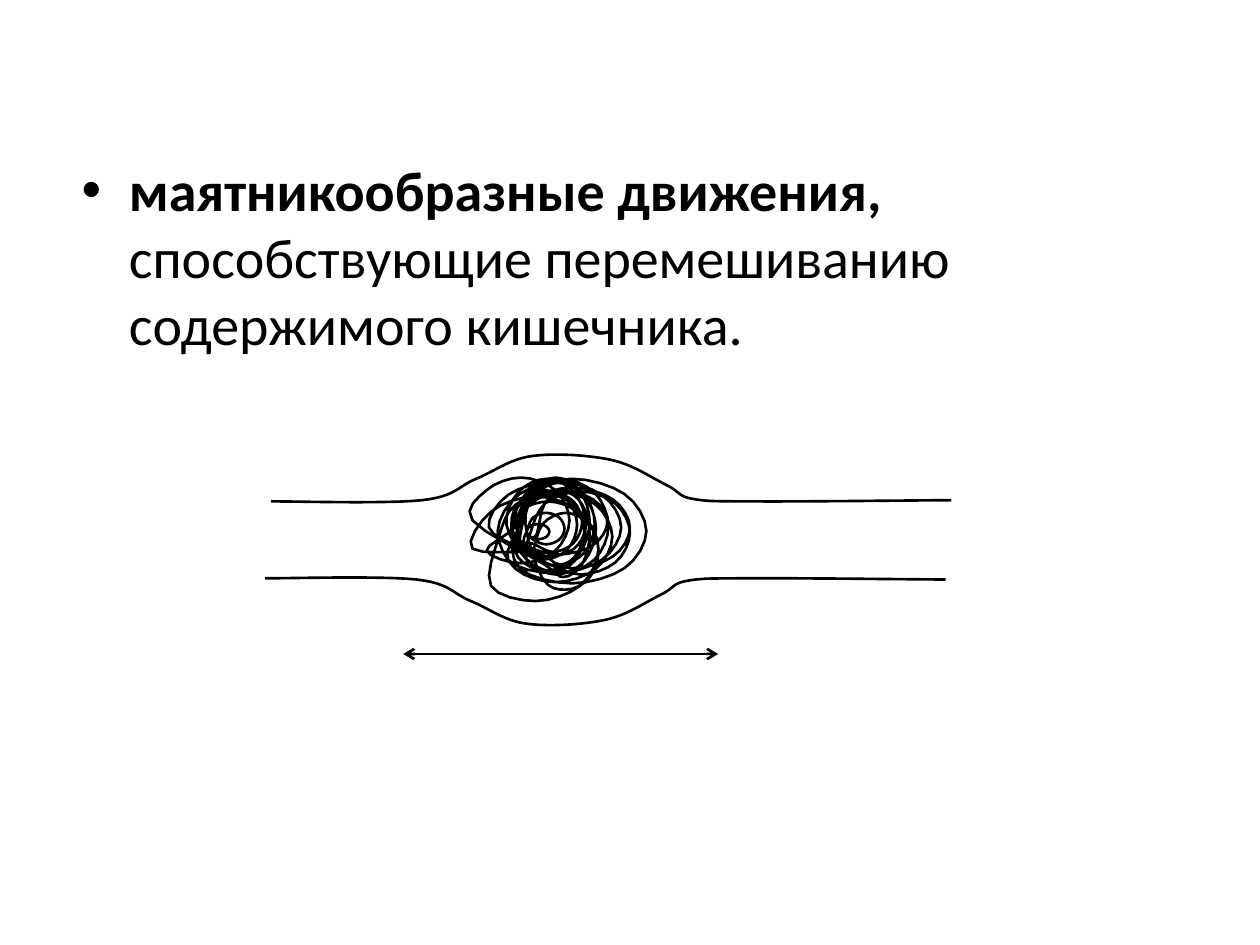
import math

from pptx import Presentation, util as u
from pptx.dml.color import RGBColor
from pptx.enum import shapes, text
from pptx.oxml.ns import qn
from lxml import etree

COLORS = {"ink": "000000"}
FONT = "Calibri"
BODY = [
    ("маятникообразные движения,", True),
    (" способствующие перемешиванию содержимого кишечника.", False),
]

# Drawing points are (x, y) on a grid of STEP points.
STEP = 0.72
WALL = [(215, 398), (335, 397), (378, 380), (422, 362), (485, 365), (529, 385),
        (550, 396), (603, 398), (755, 397)]
MIRROR = 857    # sum of the heights of the upper and lower wall
SHIFT = -4.5    # the lower wall lies a little to the left
# Each loop of the food ball: left, top, right, bottom.
LOOPS = [
    (406, 398, 464, 442), (388, 382, 493, 455), (414, 379, 468, 449),
    (411, 393, 464, 454), (402, 380, 465, 453), (406, 389, 482, 440),
    (419, 407, 448, 432), (418, 416, 436, 428), (426, 390, 468, 458),
    (375, 379, 452, 447), (408, 387, 500, 451), (410, 383, 473, 456),
    (406, 389, 458, 444), (415, 391, 462, 438), (423, 407, 475, 468),
    (417, 383, 472, 448), (375, 394, 475, 477), (396, 390, 486, 462),
    (395, 380, 513, 463), (407, 380, 483, 455), (421, 390, 500, 456),
]
TURN = 8    # points in a loop
ARROW = (230.4, 410.4, 373.7)    # left, right, height on the slide


def ink():
    return RGBColor.from_string(COLORS["ink"])


def wind(loops):
    """Return the dots of one thread that runs clockwise through all loops."""
    dots = []
    for left, top, right, low in loops:
        for n in range(TURN):
            turn = math.pi + math.tau * n / TURN
            dots.append(((left + right + (right - left) * math.cos(turn)) / 2,
                         (top + low + (low - top) * math.sin(turn)) / 2))
    return dots


def smooth(dots, cuts):
    """Return a Catmull-Rom curve through the dots, cut into short lines."""
    ends = [dots[0], *dots, dots[-1]]
    out = [dots[0]]
    for a, b, c, d in zip(ends, ends[1:], ends[2:], ends[3:]):
        for n in range(1, cuts + 1):
            t = n / cuts
            out.append(tuple(
                q + t * (r - p) / 2
                + t ** 2 * (2 * p - 5 * q + 4 * r - s) / 2
                + t ** 3 * (3 * q - p - 3 * r + s) / 2
                for p, q, r, s in zip(a, b, c, d)))
    return out


def curve(slide, dots, cuts):
    line = [(u.Pt(x * STEP), u.Pt(y * STEP)) for x, y in smooth(dots, cuts)]
    pen = slide.shapes.build_freeform(*line[0])
    pen.add_line_segments(line[1:], close=False)
    shape = pen.convert_to_shape()
    shape.shadow.inherit = False
    shape.fill.background()
    shape.line.color.rgb = ink()
    shape.line.width = u.Pt(1.5)


def arrow(slide, left, right, y):
    link = slide.shapes.add_connector(
        shapes.MSO_CONNECTOR.STRAIGHT, u.Pt(left), u.Pt(y), u.Pt(right), u.Pt(y))
    link.line.color.rgb = ink()
    link.line.width = u.Pt(1.5)
    props = link._element.spPr
    for tag in ("a:headEnd", "a:tailEnd"):
        etree.SubElement(props.find(qn("a:ln")), qn(tag), type="arrow")
    etree.SubElement(props, qn("a:effectLst"))


def write(slide, runs, box, size=32, top=3.6, indent=27):
    """Add one bulleted paragraph made of (text, bold) runs."""
    frame = slide.shapes.add_textbox(*map(u.Pt, box)).text_frame
    frame.word_wrap = True
    frame.auto_size = text.MSO_AUTO_SIZE.NONE
    frame.margin_top = u.Pt(top)
    para = frame.paragraphs[0]
    props = para._p.get_or_add_pPr()
    props.set("marL", str(u.Pt(indent)))
    props.set("indent", str(-u.Pt(indent)))
    etree.SubElement(props, qn("a:buFont"), typeface="Arial")
    etree.SubElement(props, qn("a:buChar"), char="•")
    for words, bold in runs:
        run = para.add_run()
        run.text = words
        run.font.name = FONT
        run.font.size = u.Pt(size)
        run.font.bold = bold
        run.font.color.rgb = ink()


def main():
    deck = Presentation()
    deck.slide_width, deck.slide_height = u.Pt(720), u.Pt(540)
    slide = deck.slides.add_slide(deck.slide_layouts[6])
    write(slide, BODY, (39.6, 39.6, 648, 442.8), top=49)
    curve(slide, WALL, 12)
    curve(slide, [(x + SHIFT, MIRROR - y) for x, y in WALL], 12)
    curve(slide, wind(LOOPS), 4)
    arrow(slide, *ARROW)
    deck.save("out.pptx")


if __name__ == "__main__":
    main()
